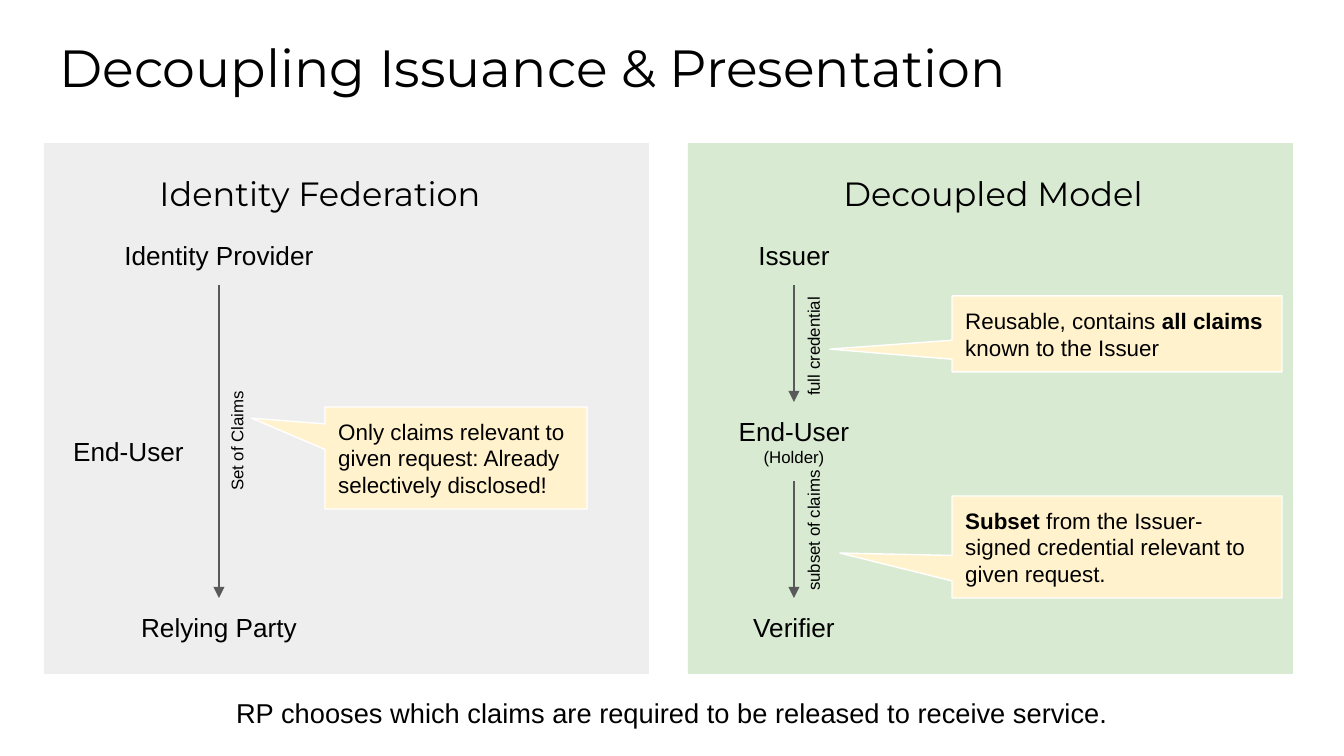
from lxml import etree
from pptx import Presentation
from pptx import util as u
from pptx.dml.color import RGBColor
from pptx.enum import shapes, text
from pptx.oxml.ns import qn

PX = 914400 / 134.4
COLORS = {"text": "000000", "grey": "EEEEEE", "green": "D9EAD3",
          "note": "FFF2CC", "edge": "FFFFFF", "arrow": "595959"}
LEFT, CENTER = text.PP_ALIGN.LEFT, text.PP_ALIGN.CENTER
TOP, MIDDLE, BOTTOM = (text.MSO_ANCHOR.TOP, text.MSO_ANCHOR.MIDDLE,
                       text.MSO_ANCHOR.BOTTOM)

TITLE = ("Decoupling Issuance & Presentation", (46, 22, 1253, 102))
HEADINGS = [
    (1, "Identity Federation ", (62, 142, 525, 85)),
    (3, "Decoupled Model ", (741, 116, 513, 111)),
]
FOOTER = ("RP chooses which claims are required to be released to receive service.",
          (42, 683, 1261, 66))
PANELS = [("grey", 44), ("green", 688)]
PANEL_TOP, PANEL_W, PANEL_H = 143, 605, 531
ACTORS = {
    "provider": (["Identity Provider"], (36, 226, 366, 59)),
    "relying": (["Relying Party"], (36, 598, 366, 59)),
    "user": (["End-User"], (50, 422, 157, 59)),
    "issuer": (["Issuer"], (719, 226, 150, 59)),
    "holder": (["End-User", "(Holder)"], (716, 402, 156, 79)),
    "verifier": (["Verifier"], (708, 598, 172, 59)),
}
ARROWS = [("provider", "relying"), ("issuer", "holder"), ("holder", "verifier")]
ARROW_LABELS = [
    ("Set of Claims", (59, 423, 355, 36), CENTER),
    ("full credential", (743, 316, 140, 36), LEFT),
    ("subset of claims", (743, 511, 140, 36), LEFT),
]
CALLOUTS = [
    ([("Only claims relevant to given request: Already selectively disclosed!", False)],
     (325, 407, 262, 102), (-0.78, -0.39)),
    ([("Reusable, contains ", False), ("all claims", True),
      (" known to the Issuer", False)],
     (952, 296, 330, 76), (-0.87, 0.2)),
    ([("Subset", True),
      (" from the Issuer-signed credential relevant to given request.", False)],
     (952, 496, 330, 102), (-0.84, 0.06)),
]


def px(*values):
    return [u.Emu(round(v * PX)) for v in values]


def color(name):
    return RGBColor.from_string(COLORS[name])


def style(font, size, name="Arial"):
    font.size, font.name, font.bold = u.Pt(size), name, False
    font.color.rgb = color("text")


def frame(sp, anchor=TOP, inset=0.1):
    tf = sp.text_frame
    tf.word_wrap, tf.vertical_anchor = True, anchor
    tf.auto_size = text.MSO_AUTO_SIZE.NONE
    tf.margin_left = tf.margin_right = u.Inches(inset)
    tf.margin_top = tf.margin_bottom = u.Inches(inset)
    return tf


def write(sp, words, size, align, anchor=TOP, inset=0.1, name="Arial"):
    p = frame(sp, anchor, inset).paragraphs[0]
    p.text, p.alignment, p.space_before = words, align, u.Pt(0)
    style(p.font, size, name)


def place(sp, box):
    sp.left, sp.top, sp.width, sp.height = px(*box)


def add_box(kind, box, fill):
    sp = s.shapes.add_shape(kind, *px(*box))
    sp.shadow.inherit = False
    sp.fill.solid()
    sp.fill.fore_color.rgb = color(fill)
    return sp


prs = Presentation()
prs.slide_width, prs.slide_height = px(1344, 756)
s = prs.slides.add_slide(prs.slide_layouts[4])
ph = {sp.placeholder_format.idx: sp for sp in s.placeholders}
for idx in (2, 4):
    s.shapes.element.remove(ph[idx].element)

for fill, left in PANELS:
    sp = add_box(shapes.MSO_SHAPE.RECTANGLE,
                 (left, PANEL_TOP, PANEL_W, PANEL_H), fill)
    sp.line.fill.background()
    s.shapes.element.insert(2, sp.element)

words, box = TITLE
place(s.shapes.title, box)
write(s.shapes.title, words, 28, LEFT, name="Montserrat")
for idx, words, box in HEADINGS:
    place(ph[idx], box)
    write(ph[idx], words, 18, CENTER, BOTTOM, name="Montserrat")

words, box = FOOTER
write(s.shapes.add_textbox(*px(*box)), words, 14.6, CENTER)

actors = {}
for key, (lines, box) in ACTORS.items():
    sp = actors[key] = s.shapes.add_textbox(*px(*box))
    p = frame(sp).paragraphs[0]
    p.alignment = CENTER
    for i, line in enumerate(lines):
        if i:
            p.add_line_break()
        r = p.add_run()
        r.text = line
        style(r.font, 9 if i else 14)

for start, end in ARROWS:
    c = s.shapes.add_connector(shapes.MSO_CONNECTOR.STRAIGHT, 0, 0, 0, 0)
    c.begin_connect(actors[start], 2)
    c.end_connect(actors[end], 0)
    c.line.color.rgb, c.line.width = color("arrow"), u.Pt(0.75)
    etree.SubElement(c.line._get_or_add_ln(), qn("a:tailEnd"), type="triangle")
    etree.SubElement(c.element.spPr, qn("a:effectLst"))

for words, box, align in ARROW_LABELS:
    sp = s.shapes.add_textbox(*px(*box))
    sp.rotation = 270
    write(sp, words, 9, align, inset=0.06)

for runs, box, tip in CALLOUTS:
    sp = add_box(shapes.MSO_SHAPE.RECTANGULAR_CALLOUT, box, "note")
    sp.line.color.rgb, sp.line.width = color("edge"), u.Pt(0.75)
    sp.adjustments[0], sp.adjustments[1] = tip
    p = frame(sp, MIDDLE).paragraphs[0]
    p.alignment = LEFT
    style(p.font, 12)
    for words, bold in runs:
        r = p.add_run()
        r.text, r.font.bold = words, bold

prs.save("out.pptx")
